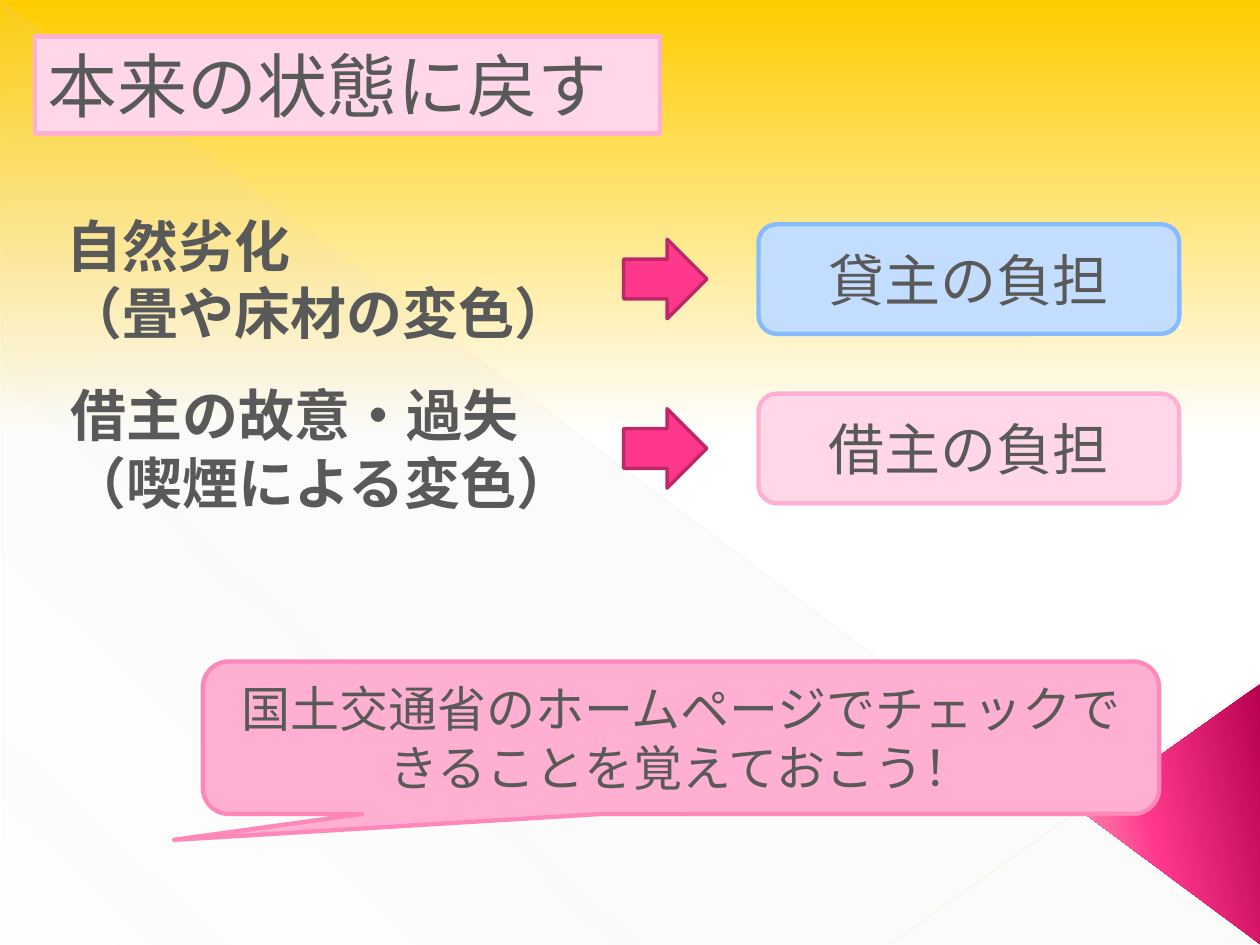
"""Build the slide on who pays for restoring a rented room."""
from lxml.etree import SubElement
from pptx import Presentation
from pptx.dml.color import RGBColor
from pptx.enum.shapes import MSO_CONNECTOR, MSO_SHAPE
from pptx.enum.text import MSO_ANCHOR, PP_ALIGN
from pptx.oxml.ns import qn
from pptx.util import Inches, Pt

presentation = Presentation()
presentation.slide_width, presentation.slide_height = Inches(10), Inches(7.5)
column = presentation.slide_width / 100
row = presentation.slide_height / 100
slide = presentation.slides.add_slide(presentation.slide_layouts[6])
color = RGBColor.from_string


def apply_gradient(owner, fill, angle, stops):
    """Fill with (position, colour, opacity) stops, all in percent."""
    fill.gradient()
    fill.gradient_angle = 360 - angle
    stop_list = owner.element.find(".//" + qn("a:gsLst"))
    for old_stop in list(stop_list):
        stop_list.remove(old_stop)
    for position, shade, opacity in stops:
        stop = SubElement(stop_list, qn("a:gs"), pos=str(position * 1000))
        tint = SubElement(stop, qn("a:srgbClr"), val=shade)
        SubElement(tint, qn("a:alpha"), val=str(opacity * 1000))


def add_box(kind, place, fill=None, outline=None, weight=2.5, lines=(),
            size=32, font="Noto Sans CJK JP", bold=False,
            align=PP_ALIGN.CENTER, anchor=MSO_ANCHOR.MIDDLE):
    """Add a shape placed in columns and rows, with optional text."""
    left, top, width, height = place
    shape = slide.shapes.add_shape(kind, int(left * column), int(top * row),
                                   int(width * column), int(height * row))
    shape.shadow.inherit = False
    if fill:
        shape.fill.solid()
        shape.fill.fore_color.rgb = color(fill)
    else:
        shape.fill.background()
    if outline:
        shape.line.color.rgb = color(outline)
        shape.line.width = Pt(weight)
    else:
        shape.line.fill.background()
    frame = shape.text_frame
    frame.word_wrap = True
    frame.vertical_anchor = anchor
    for index, line in enumerate(lines):
        paragraph = frame.add_paragraph() if index else frame.paragraphs[0]
        paragraph.text = line
        paragraph.alignment = align
        paragraph.font.size = Pt(size)
        paragraph.font.name = font
        paragraph.font.bold = bold
        paragraph.font.color.rgb = color("595959")
    return shape


apply_gradient(slide, slide.background.fill, 90,
               [(0, "FFCC00", 100), (46, "FFFFFF", 100), (100, "FFFFFF", 100)])

veil = add_box(MSO_SHAPE.RIGHT_TRIANGLE, (0.1, 0.27, 99.8, 99.73))
apply_gradient(veil, veil.fill, 133,
               [(0, "D2D2D2", 10), (70, "D2D2D2", 8), (100, "D2D2D2", 1)])

for left, top, right, bottom, shade, weight, opacity in (
        (0, 0.13, 99.9, 99.87, "FFDFB4", 0.39, 35),
        (100, 72.13, 70.7, 99.87, "FFE2BD", 0.47, 45)):
    line = slide.shapes.add_connector(
        MSO_CONNECTOR.STRAIGHT, int(left * column), int(top * row),
        int(right * column), int(bottom * row))
    line.line.color.rgb = color(shade)
    line.line.width = Pt(weight)
    tint = line.element.find(".//" + qn("a:srgbClr"))
    SubElement(tint, qn("a:alpha"), val=str(opacity * 1000))
    SubElement(line.element.spPr, qn("a:effectLst"))

corner = add_box(MSO_SHAPE.ISOSCELES_TRIANGLE, (82.6, 76.67, 20.7, 18.93))
corner.rotation = 270
corner.adjustments[0] = 0.51
apply_gradient(corner, corner.fill, 258,
               [(0, "B8014E", 100), (60, "FF388C", 100), (100, "FF9CB9", 100)])

add_box(MSO_SHAPE.RECTANGLE, (2.8, 3.87, 49.6, 10.27), "FFD7E8", "FFAFD1",
        lines=["本来の状態に戻す"], size=40, align=PP_ALIGN.LEFT,
        anchor=MSO_ANCHOR.TOP)

cases = (
    (4.3, ["自然劣化", "（畳や床材の変色）"], "貸主の負担", "C3DDFF", "87BBFF"),
    (4.6, ["借主の故意・過失", "（喫煙による変色）"], "借主の負担", "FFD7E8", "FFAFD1"),
)
for index, (left, cause, payer, fill, outline) in enumerate(cases):
    top = 21.73 + 17.93 * index
    add_box(MSO_SHAPE.RECTANGLE, (left, top, 42.7, 15.73), lines=cause,
            font="Arial", bold=True, align=PP_ALIGN.LEFT, anchor=MSO_ANCHOR.TOP)
    add_box(MSO_SHAPE.RIGHT_ARROW, (49.5, top + 3.6, 6.6, 8.4),
            "FF388C", "BD2968", 2)
    add_box(MSO_SHAPE.ROUNDED_RECTANGLE, (60.2, top + 2, 33.4, 11.6),
            fill, outline, lines=[payer])

callout = add_box(MSO_SHAPE.ROUNDED_RECTANGULAR_CALLOUT, (16.1, 70, 75.9, 16.13),
                  "FFAFD1", "FF88BA", size=28,
                  lines=["国土交通省のホームページでチェックできることを覚えておこう！"])
for index, value in enumerate((-0.53, 0.67, 0.17)):
    callout.adjustments[index] = value

presentation.save("out.pptx")
